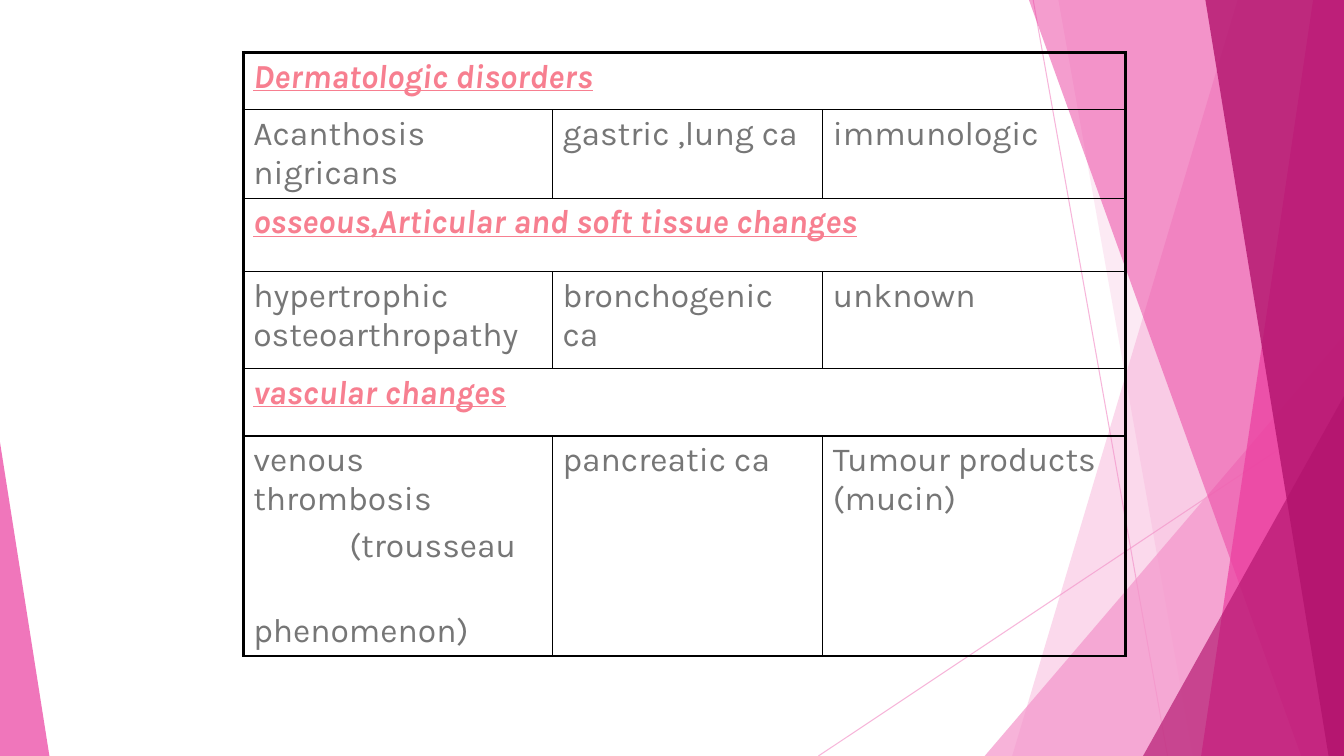
import pptx
import pptx.util
import pptx.dml.color
import pptx.enum.shapes
import pptx.oxml
import pptx.oxml.ns
import lxml.etree

Pt = pptx.util.Pt
RGB = pptx.dml.color.RGBColor.from_string
qn = pptx.oxml.ns.qn

WIDTH, HEIGHT = 960, 540
theme = {
    "light": "F496CB", "pink": "EB3D9F", "deep": "B2136D", "border": "000000",
    "outer": 2.25, "inner": 1, "hairline": 0.75,
    "heading": {"name": "Karla", "size": Pt(24), "bold": True, "italic": True, "underline": True},
    "body": {"name": "Karla", "size": Pt(24), "bold": False, "italic": False, "underline": False},
    "heading_color": "F77F90", "body_color": "767676",
}


def set_alpha(shape, percent):
    color = shape._element.spPr.find(".//" + qn("a:srgbClr"))
    lxml.etree.SubElement(color, qn("a:alpha"), val=str(percent * 1000))


def write(para, text, style):
    span = para.add_run()
    span.text = text
    for name, value in theme[style].items():
        setattr(span.font, name, value)
    span.font.color.rgb = RGB(theme[style + "_color"])


deck = pptx.Presentation()
deck.slide_width, deck.slide_height = Pt(WIDTH), Pt(HEIGHT)
page = deck.slides.add_slide(deck.slide_layouts[6])

# Thin crossing lines
for ends in [(738, 0, 834, HEIGHT), (WIDTH, 290, 584.6, HEIGHT)]:
    line = page.shapes.add_connector(
        pptx.enum.shapes.MSO_CONNECTOR.STRAIGHT, *[Pt(end) for end in ends])
    line.line.color.rgb = RGB(theme["light"])
    line.line.width = Pt(theme["hairline"])
    set_alpha(line, 70)
    lxml.etree.SubElement(line._element.spPr, qn("a:effectLst"))

# Translucent facets: bands run to the right edge, triangles stand on the bottom edge
facets = [
    ("band", (884, 723), "light", 36),
    ("band", (756, 852), "light", 20),
    ("triangle", (703.4, 239.8, 256.6, 1), "light", 72),
    ("band", (735, 929.5), "pink", 50),
    ("band", (938, 858), "pink", 70),
    ("band", (861, 949), "deep", 80),
    ("triangle", (816.5, 283, 143.5, 1), "deep", 66),
    ("triangle", (0, 316, 35.3, 0), "pink", 70),
]
for kind, place, color, alpha in facets:
    if kind == "band":
        top_x, bottom_x = place
        outline = page.shapes.build_freeform(Pt(top_x), 0)
        corners = [(WIDTH, 0), (WIDTH, HEIGHT), (bottom_x, HEIGHT)]
        outline.add_line_segments([(Pt(x), Pt(y)) for x, y in corners])
        facet = outline.convert_to_shape()
    else:
        left, top, width, apex = place
        facet = page.shapes.add_shape(
            pptx.enum.shapes.MSO_SHAPE.ISOSCELES_TRIANGLE,
            Pt(left), Pt(top), Pt(width), Pt(HEIGHT - top))
        facet.adjustments[0] = apex
    facet.shadow.inherit = False
    facet.fill.solid()
    facet.fill.fore_color.rgb = RGB(theme[color])
    facet.line.fill.background()
    set_alpha(facet, alpha)

# Table: a one-cell row is a heading across all columns
rows = [
    ["Dermatologic disorders"],
    ["Acanthosis nigricans", "gastric ,lung ca", "immunologic"],
    ["osseous,Articular and soft tissue changes"],
    ["hypertrophic osteoarthropathy", "bronchogenic ca", "unknown"],
    ["vascular changes"],
    ["venous thrombosis\n(trousseau\nphenomenon)", "pancreatic ca", "Tumour products (mucin)"],
]
row_heights = [41, 39.6, 52.6, 69.1, 48.2, 105.2]
column_widths = [221, 193, 216]
# Space before and left indent of each paragraph in a cell
para_layout = [(0, 0), (5, 68.6), (33, 0)]

frame = page.shapes.add_table(
    len(rows), len(column_widths), Pt(173.7), Pt(37.4),
    Pt(sum(column_widths)), Pt(sum(row_heights)))
table = frame.table
table.first_row = table.horz_banding = False
for column, width in zip(table.columns, column_widths):
    column.width = Pt(width)
for row, height in zip(table.rows, row_heights):
    row.height = Pt(height)

last_row, last_column = len(rows) - 1, len(column_widths) - 1
for r, texts in enumerate(rows):
    style = "heading" if len(texts) == 1 else "body"
    if style == "heading":
        table.cell(r, 0).merge(table.cell(r, last_column))
    for c, text in enumerate(texts):
        box = table.cell(r, c).text_frame
        for i, part in enumerate(text.split("\n")):
            para = box.paragraphs[0] if i == 0 else box.add_paragraph()
            before, indent = para_layout[i]
            para.space_before = Pt(before)
            para._p.get_or_add_pPr().set("marL", str(Pt(indent)))
            write(para, part, style)

    # Cell borders: heavy outside, fine inside
    for c in range(last_column + 1):
        cell = table.cell(r, c)
        cell.fill.background()
        at_edge = {"L": c == 0, "R": c == last_column or style == "heading",
                   "T": r == 0, "B": r == last_row}
        for i, (side, outer) in enumerate(at_edge.items()):
            weight = Pt(theme["outer" if outer else "inner"])
            border = pptx.oxml.parse_xml(
                f'<a:ln{side} {pptx.oxml.ns.nsdecls("a")} w="{weight}"><a:solidFill>'
                f'<a:srgbClr val="{theme["border"]}"/></a:solidFill></a:ln{side}>')
            cell._tc.get_or_add_tcPr().insert(i, border)

deck.save("out.pptx")
